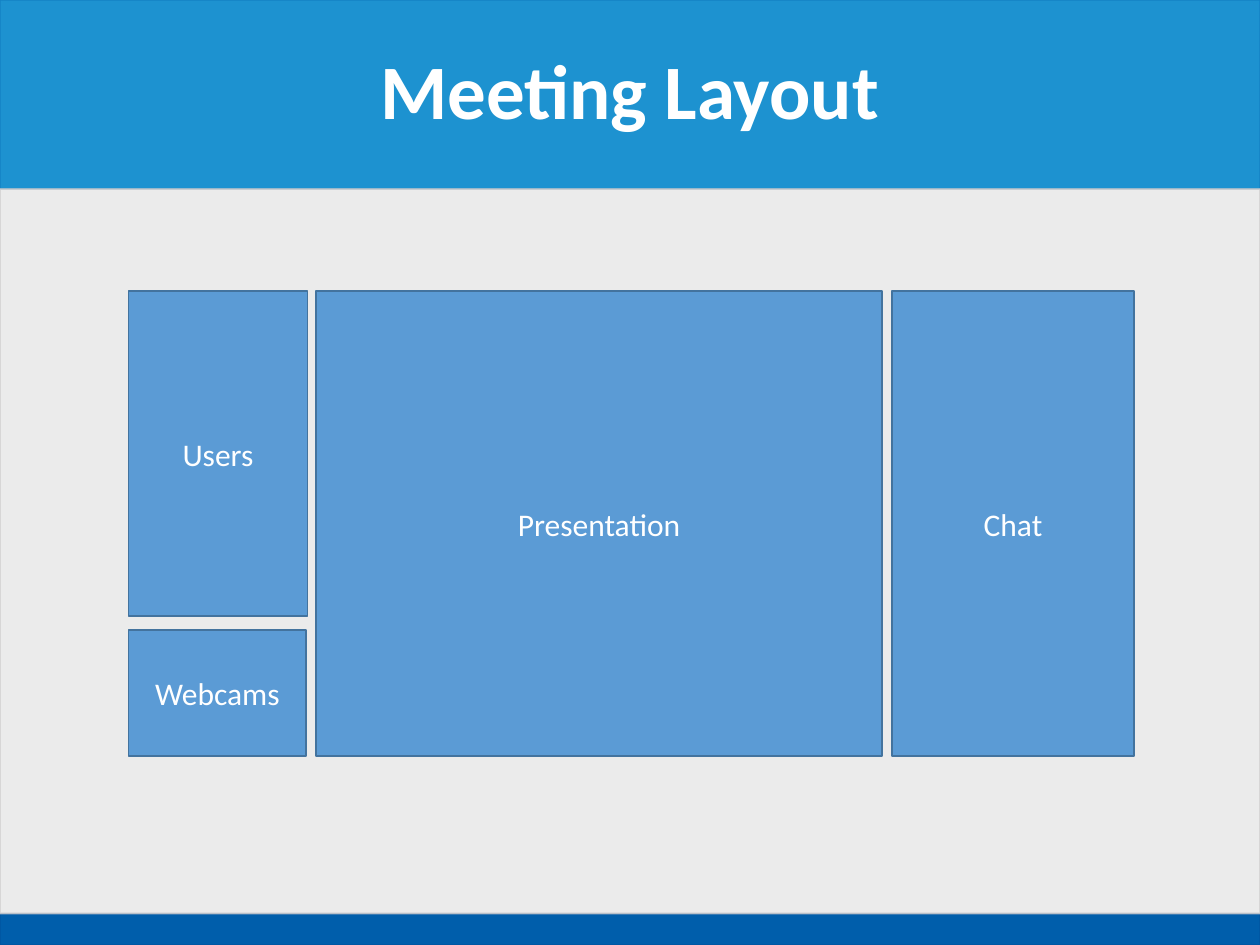
from lxml.etree import SubElement
from pptx import Presentation
from pptx.dml.color import RGBColor
from pptx.enum.shapes import MSO_SHAPE
from pptx.enum.text import MSO_ANCHOR, PP_ALIGN
from pptx.oxml.ns import qn
from pptx.util import Inches, Pt

WIDTH, HEIGHT = 10, 7.5
TITLE_HEIGHT, FOOTER_HEIGHT = 1.5, 0.25
BODY_HEIGHT = HEIGHT - TITLE_HEIGHT - FOOTER_HEIGHT
PANEL_TOP, PANEL_BOTTOM = 2.31, 6
PANEL_HEIGHT = PANEL_BOTTOM - PANEL_TOP


def paint(fill, color):
    """Give a fill a solid colour from a hex string."""
    fill.solid()
    fill.fore_color.rgb = RGBColor.from_string(color)


def add_rectangle(slide, box, fill, line, line_width, opacity=100):
    """Add a rectangle whose outline may be translucent."""
    shape = slide.shapes.add_shape(MSO_SHAPE.RECTANGLE, *map(Inches, box))
    shape.shadow.inherit = False
    if fill:
        paint(shape.fill, fill)
    else:
        shape.fill.background()
    paint(shape.line.fill, line)
    shape.line.width = Pt(line_width)
    if opacity < 100:
        color = shape.line._ln.find(".//" + qn("a:srgbClr"))
        SubElement(color, qn("a:alpha"), val=str(opacity * 1000))
    return shape


def set_text(shape, text, line_spacing=1.0, **font_format):
    """Write white text centred in a shape."""
    frame = shape.text_frame
    frame.word_wrap = True
    frame.vertical_anchor = MSO_ANCHOR.MIDDLE
    paragraph = frame.paragraphs[0]
    paragraph.alignment = PP_ALIGN.CENTER
    paragraph.line_spacing = line_spacing
    run = paragraph.add_run()
    run.text = text
    for name, value in {"name": "Calibri", **font_format}.items():
        setattr(run.font, name, value)
    paint(run.font.fill, "FFFFFF")


def add_title(slide, text):
    """Add the title band across the top."""
    band = add_rectangle(slide, (0, 0, WIDTH, TITLE_HEIGHT), "1D92D0", "005EAB", 0.75, 33)
    set_text(band, text, line_spacing=0.9, size=Pt(44), bold=True)


def add_panel(slide, text, box):
    """Add one labelled panel of the meeting window."""
    panel = add_rectangle(slide, box, "5B9BD5", "43739E", 1)
    set_text(panel, text, size=Pt(18))


def main():
    """Build the meeting layout slide."""
    presentation = Presentation()
    presentation.slide_width, presentation.slide_height = Inches(WIDTH), Inches(HEIGHT)
    slide = presentation.slides.add_slide(presentation.slide_layouts[6])
    paint(slide.background.fill, "EBEBEB")

    add_title(slide, "Meeting Layout")
    footer = (0, HEIGHT - FOOTER_HEIGHT, WIDTH, FOOTER_HEIGHT)
    add_rectangle(slide, footer, "005EAB", "002060", 0.75, 15)
    for opacity in (40, 50):
        body = (0, TITLE_HEIGHT, WIDTH, BODY_HEIGHT)
        add_rectangle(slide, body, None, "D0CECE", 1, opacity)

    panels = {
        "Webcams": (1.02, 5, 1.41, PANEL_BOTTOM - 5),
        "Users": (1.02, PANEL_TOP, 1.42, 2.58),
        "Presentation": (2.51, PANEL_TOP, 4.49, PANEL_HEIGHT),
        "Chat": (7.08, PANEL_TOP, 1.92, PANEL_HEIGHT),
    }
    for text, box in panels.items():
        add_panel(slide, text, box)
    presentation.save("out.pptx")


if __name__ == "__main__":
    main()
